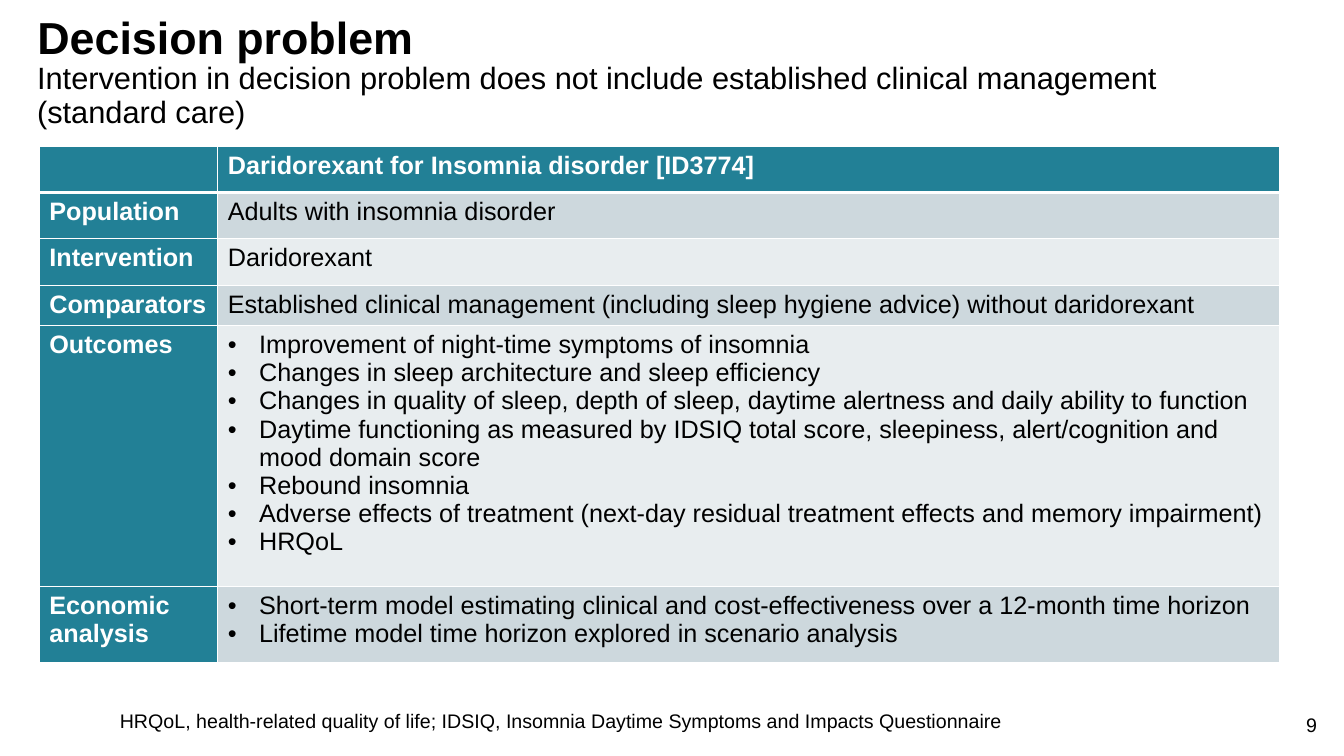
from lxml import etree
from pptx import Presentation
from pptx.dml.color import RGBColor
from pptx.enum.text import MSO_ANCHOR, PP_ALIGN
from pptx.oxml.ns import qn
from pptx.util import Inches, Pt

TEAL = RGBColor(0x22, 0x80, 0x96)
DARK_BAND = RGBColor(0xCD, 0xD8, 0xDD)
LIGHT_BAND = RGBColor(0xE8, 0xED, 0xEF)
WHITE = RGBColor(0xFF, 0xFF, 0xFF)
BLACK = RGBColor(0, 0, 0)

LEFT, TEXT_WIDTH = 0.27, 12.3
COLUMN_WIDTHS = [1.77, 10.53]
ROW_HEIGHTS = [0.46, 0.46, 0.46, 0.39, 2.59, 0.75]
BULLET_INDENT = Inches(0.31)

# A list in the second column becomes bullets
ROWS = [
    ("", "Daridorexant for Insomnia disorder [ID3774]"),
    ("Population", "Adults with insomnia disorder"),
    ("Intervention", "Daridorexant"),
    ("Comparators", "Established clinical management (including sleep hygiene advice) "
                    "without daridorexant"),
    ("Outcomes", [
        "Improvement of night-time symptoms of insomnia",
        "Changes in sleep architecture and sleep efficiency",
        "Changes in quality of sleep, depth of sleep, daytime alertness and daily ability "
        "to function",
        "Daytime functioning as measured by IDSIQ total score, sleepiness, alert/cognition "
        "and mood domain score",
        "Rebound insomnia",
        "Adverse effects of treatment (next-day residual treatment effects and memory "
        "impairment)",
        "HRQoL",
    ]),
    ("Economic analysis", [
        "Short-term model estimating clinical and cost-effectiveness over a 12-month time "
        "horizon",
        "Lifetime model time horizon explored in scenario analysis",
    ]),
]


def set_font(paragraph, size, color=BLACK, bold=False):
    font = paragraph.font
    font.name, font.size, font.bold = "Arial", Pt(size), bold
    font.color.rgb = color


def fill_text(shape, box, text, size, bold=False, spacing=0.9):
    shape.left, shape.top, shape.width, shape.height = (Inches(length) for length in box)
    frame = shape.text_frame
    frame.word_wrap = True
    frame.vertical_anchor = MSO_ANCHOR.TOP
    paragraph = frame.paragraphs[0]
    paragraph.text = text
    paragraph.line_spacing = spacing
    set_font(paragraph, size, bold=bold)
    return paragraph


presentation = Presentation()
presentation.slide_width = Inches(13.33)
presentation.slide_height = Inches(7.5)
slide = presentation.slides.add_slide(presentation.slide_layouts[5])

# Title
title = fill_text(slide.shapes.title, (LEFT, 0.11, TEXT_WIDTH, 0.65),
                  "Decision problem", 32, bold=True)
title.alignment = PP_ALIGN.LEFT

# Subtitle, abbreviations and page number
texts = [
    ((LEFT, 0.58, TEXT_WIDTH, 0.57), "Intervention in decision problem does not include "
     "established clinical management (standard care)", 22, 0.9, PP_ALIGN.LEFT),
    ((1.09, 7.01, 11.38, 0.4), "HRQoL, health-related quality of life; IDSIQ, Insomnia "
     "Daytime Symptoms and Impacts Questionnaire", 14, 0.9, PP_ALIGN.LEFT),
    ((12.65, 7.02, 0.51, 0.4), "9", 14, 1.0, PP_ALIGN.RIGHT),
]
for box, text, size, spacing, alignment in texts:
    text_box = slide.shapes.add_textbox(0, 0, 0, 0)
    fill_text(text_box, box, text, size, spacing=spacing).alignment = alignment

# Decision problem table
table = slide.shapes.add_table(
    len(ROWS), len(COLUMN_WIDTHS), Inches(0.39), Inches(1.45),
    Inches(sum(COLUMN_WIDTHS)), Inches(sum(ROW_HEIGHTS))).table
for column, width in zip(table.columns, COLUMN_WIDTHS):
    column.width = Inches(width)
for row, height in zip(table.rows, ROW_HEIGHTS):
    row.height = Inches(height)

for row_index, row_texts in enumerate(ROWS):
    for column_index, content in enumerate(row_texts):
        cell = table.cell(row_index, column_index)
        is_heading = row_index == 0 or column_index == 0
        band = DARK_BAND if row_index % 2 else LIGHT_BAND

        # White borders, thicker between header and body
        properties = cell._tc.get_or_add_tcPr()
        for side in ("lnL", "lnR", "lnT", "lnB"):
            thick = (row_index, side) in ((0, "lnB"), (1, "lnT"))
            line = etree.SubElement(properties, qn(f"a:{side}"), w=str(Pt(3 if thick else 1)))
            line_fill = etree.SubElement(line, qn("a:solidFill"))
            etree.SubElement(line_fill, qn("a:srgbClr"), val=str(WHITE))
        cell.fill.solid()
        cell.fill.fore_color.rgb = TEAL if is_heading else band

        # Cell text
        bulleted = isinstance(content, list)
        lines = content if bulleted else [content]
        cell.text = "\n".join(lines)
        for paragraph in cell.text_frame.paragraphs:
            if bulleted:
                paragraph_properties = paragraph._p.get_or_add_pPr()
                paragraph_properties.set("marL", str(BULLET_INDENT))
                paragraph_properties.set("indent", str(-BULLET_INDENT))
                etree.SubElement(paragraph_properties, qn("a:buFont"), typeface="Arial")
                etree.SubElement(paragraph_properties, qn("a:buChar"), char="•")
            set_font(paragraph, 18, WHITE if is_heading else BLACK, is_heading)

presentation.save("out.pptx")
